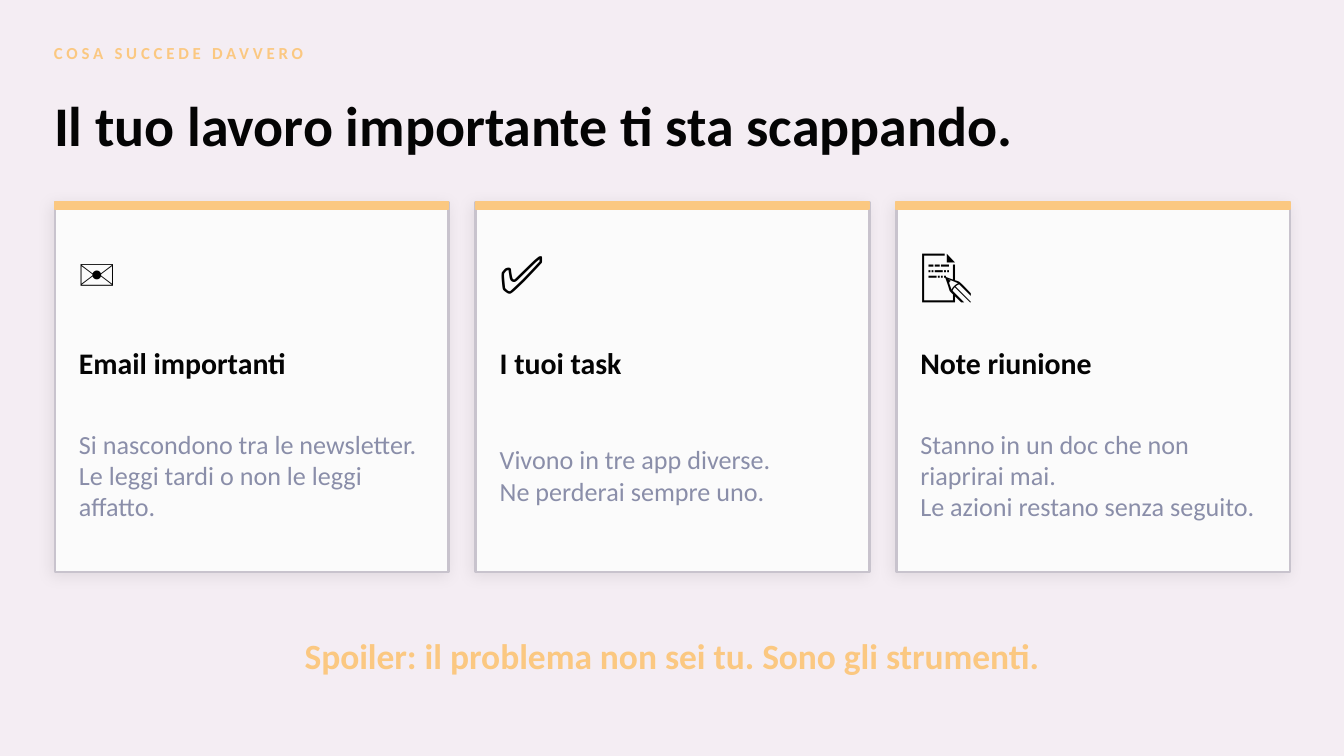
from lxml.etree import SubElement
from pptx import Presentation
from pptx.dml.color import RGBColor
from pptx.enum.shapes import MSO_SHAPE as Shape
from pptx.enum.text import MSO_ANCHOR as Anchor, MSO_AUTO_SIZE as AutoSize, PP_ALIGN as Align
from pptx.oxml.ns import qn
from pptx.util import Pt

COLORS = {
    "background": "F4EDF3",
    "accent": "FBC881",
    "ink": "040404",
    "icon": "000000",
    "muted": "8A8EA9",
    "card": "FBFBFB",
    "border": "C8C3CD",
    "shadow": "000000",
}

KICKER = "COSA SUCCEDE DAVVERO"
TITLE = "Il tuo lavoro importante ti sta scappando."
CARDS = [
    ("✉️", "Email importanti",
     ["Si nascondono tra le newsletter.", "Le leggi tardi o non le leggi affatto."]),
    ("✅", "I tuoi task",
     ["Vivono in tre app diverse.", "Ne perderai sempre uno."]),
    ("📝", "Note riunione",
     ["Stanno in un doc che non riaprirai mai.", "Le azioni restano senza seguito."]),
]
CLOSING = "Spoiler: il problema non sei tu. Sono gli strumenti."

EMU_PER_PX = 914400 / 134.4
SLIDE_W, SLIDE_H = 1344, 756
MARGIN, CONTENT_W = 54, 1236
CARDS_LEFT, CARDS_RIGHT, CARD_GAP = 55, 1290, 27
CARD_TOP, CARD_H, BAR_H = 202, 370, 7
CARD_W = (CARDS_RIGHT - CARDS_LEFT + CARD_GAP) / len(CARDS) - CARD_GAP
CARD_INSET, CARD_TEXT_W = 24, 353


def px(length):
    return round(length * EMU_PER_PX)


def color(name):
    return RGBColor.from_string(COLORS[name])


def place(shape, left, top, width, height):
    shape.left, shape.top = px(left), px(top)
    shape.width, shape.height = px(width), px(height)


def write(box, lines, size, tint, bold=False, font="Calibri", align=Align.LEFT, tracking=None):
    """Fill a box with one paragraph per line; tracking is in points."""
    frame = box.text_frame
    frame.word_wrap = True
    frame.auto_size = AutoSize.NONE
    frame.vertical_anchor = Anchor.MIDDLE
    frame.margin_left = frame.margin_right = frame.margin_top = frame.margin_bottom = 0
    for index, line in enumerate(lines):
        para = frame.add_paragraph() if index else frame.paragraphs[0]
        para.alignment = align
        span = para.add_run()
        span.text = line
        span.font.name = font
        span.font.size = Pt(size)
        span.font.bold = bold
        span.font.color.rgb = color(tint)
        if tracking:
            span.font._element.set("spc", str(tracking * 100))


def add_text(page, area, lines, size, tint, **style):
    box = page.shapes.add_textbox(*map(px, area))
    write(box, lines, size, tint, **style)


def add_rectangle(page, area, fill, line, line_width):
    shape = page.shapes.add_shape(Shape.RECTANGLE, *map(px, area))
    shape.shadow.inherit = False
    shape.fill.solid()
    shape.fill.fore_color.rgb = color(fill)
    shape.line.color.rgb = color(line)
    shape.line.width = Pt(line_width)
    return shape


def add_soft_shadow(shape):
    effects = shape._element.spPr.find(qn("a:effectLst"))
    shadow = SubElement(effects, qn("a:outerShdw"), blurRad=str(Pt(8)), dist=str(Pt(2)),
                        dir=str(135 * 60000), algn="bl", rotWithShape="0")
    tint = SubElement(shadow, qn("a:srgbClr"), val=COLORS["shadow"])
    SubElement(tint, qn("a:alpha"), val="8000")


def add_card(page, left, icon, heading, lines):
    panel = add_rectangle(page, (left, CARD_TOP, CARD_W, CARD_H), "card", "border", 1.5)
    add_soft_shadow(panel)
    add_rectangle(page, (left, CARD_TOP, CARD_W, BAR_H), "accent", "accent", 1)
    text_left = left + CARD_INSET
    add_text(page, (text_left, 226, 94, 94), [icon], 28, "icon", font="Lato")
    add_text(page, (text_left, 333, CARD_TEXT_W, 60), [heading], 16, "ink", bold=True)
    add_text(page, (text_left, 401, CARD_TEXT_W, 148), lines, 14, "muted")


def main():
    deck = Presentation()
    deck.slide_width, deck.slide_height = px(SLIDE_W), px(SLIDE_H)
    page = deck.slides.add_slide(deck.slide_layouts.get_by_name("Title Only"))
    page.background.fill.solid()
    page.background.fill.fore_color.rgb = color("background")

    add_text(page, (MARGIN, 34, 806, 38), [KICKER], 9, "accent", bold=True, tracking=2)
    title = page.shapes.title
    place(title, MARGIN, 74, CONTENT_W, 101)
    write(title, [TITLE], 30, "ink", bold=True)

    for index, card in enumerate(CARDS):
        add_card(page, CARDS_LEFT + index * (CARD_W + CARD_GAP), *card)

    add_text(page, (MARGIN, 607, CONTENT_W, 97), [CLOSING], 19, "accent",
             bold=True, align=Align.CENTER)
    deck.save("out.pptx")


if __name__ == "__main__":
    main()
